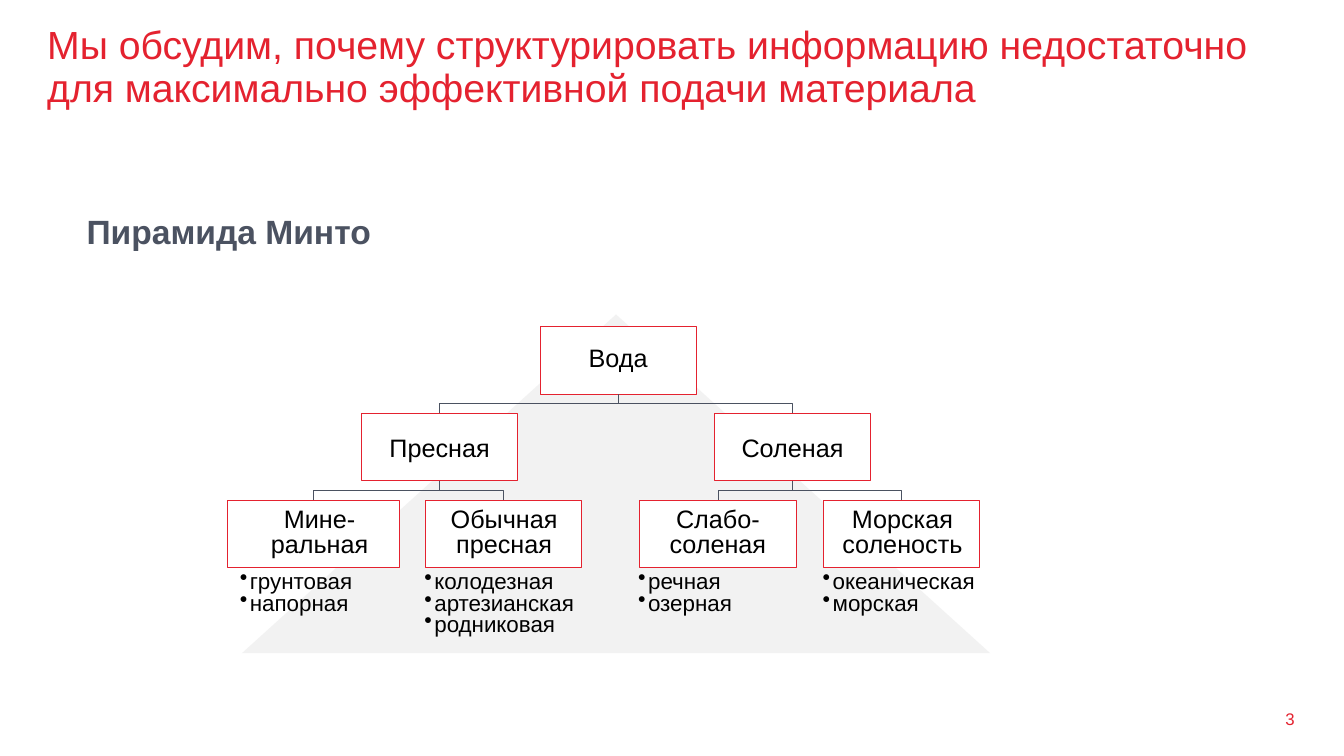
import pptx
import pptx.util
import pptx.dml.color
import pptx.enum.shapes
import pptx.enum.text
import pptx.oxml.ns
import lxml.etree

# Content
TITLE = ("Мы обсудим, почему структурировать информацию недостаточно "
         "для максимально эффективной подачи материала")
HEAD = "Пирамида Минто"
PAGE = "3"
# Tree nodes: label, level, box centre, parent
NODES = [
    ("Вода", 0, 6.13, None),
    ("Пресная", 1, 4.36, 0),
    ("Соленая", 1, 7.86, 0),
    ("Мине-ральная", 2, 3.11, 1),
    ("Обычная пресная", 2, 4.99, 1),
    ("Слабо- соленая", 2, 7.12, 2),
    ("Морская соленость", 2, 8.94, 2),
]
LISTS = [
    ["грунтовая", "напорная"],
    ["колодезная", "артезианская", "родниковая"],
    ["речная", "озерная"],
    ["океаническая", "морская"],
]
LISTW = [1.66, 2.16, 1.66, 2.31]

RED, GREY, PALE, WHITE, BLACK = "E4222F", "4B5261", "F2F2F2", "FFFFFF", "000000"
FONT = "Arial"

# Grid: rows of boxes, two pairs of leaf columns
TOP, ROW, BOXW, WIDE, BOXH = 3.24, 0.86, 1.55, 1.7, 0.67
PAIRS, STEP, LEAFW, LEAFH = (2.26, 6.21), 1.83, 1.82, 0.55
LEAVES = [left + STEP * k for left in PAIRS for k in range(2)]

inch = pptx.util.Inches
SHAPE = pptx.enum.shapes.MSO_SHAPE
ALIGN = pptx.enum.text.PP_ALIGN
ANCHOR = pptx.enum.text.MSO_ANCHOR
qn = pptx.oxml.ns.qn

deck = pptx.Presentation()
deck.slide_width, deck.slide_height = inch(13.33), inch(7.5)
slide = deck.slides.add_slide(deck.slide_layouts[6])


def tint(text):
    return pptx.dml.color.RGBColor.from_string(text)


def write(lines, at, size, color=BLACK, bold=False, align=ALIGN.LEFT,
          anchor=ANCHOR.TOP, space=1.0, dots=False):
    box = slide.shapes.add_textbox(*map(inch, at))
    frame = box.text_frame
    frame.word_wrap = True
    frame.vertical_anchor = anchor
    for i, line in enumerate(lines):
        para = frame.add_paragraph() if i else frame.paragraphs[0]
        para.text = line
        para.alignment = align
        para.line_spacing = space
        para.font.name, para.font.size = FONT, pptx.util.Pt(size)
        para.font.bold = bold
        para.font.color.rgb = tint(color)
        if dots:
            props = para._p.get_or_add_pPr()
            props.set("marL", str(inch(0.1)))
            props.set("indent", str(inch(-0.1)))
            mark = lxml.etree.Element(qn("a:buChar"), char="•")
            props.find(qn("a:defRPr")).addprevious(mark)


def draw(kind, at, fill, line=None):
    shape = slide.shapes.add_shape(kind, *map(inch, at))
    shape.shadow.inherit = False
    shape.fill.solid()
    shape.fill.fore_color.rgb = tint(fill)
    if line:
        shape.line.color.rgb = tint(line)
        shape.line.width = pptx.util.Pt(0.5)
    else:
        shape.line.fill.background()


def link(x1, y1, x2, y2):
    # An elbow turned a quarter, so that it leaves downwards
    midx, midy = (x1 + x2) / 2, (y1 + y2) / 2
    halfw, halfh = (y2 - y1) / 2, abs(x2 - x1) / 2
    side = 1 if x2 > x1 else -1
    ends = (midx + side * halfw, midy - halfh, midx - side * halfw, midy + halfh)
    wire = slide.shapes.add_connector(
        pptx.enum.shapes.MSO_CONNECTOR.ELBOW, *map(inch, ends))
    turn = 270 if side > 0 else 90
    wire._element.spPr.find(qn("a:xfrm")).set("rot", str(turn * 60000))
    wire.line.color.rgb = tint(GREY)
    wire.line.width = pptx.util.Pt(0.5)
    lxml.etree.SubElement(wire._element.spPr, qn("a:effectLst"))


# Title, page number, heading
write([TITLE], (0.37, 0.21, 12.6, 1.26), 28, RED, space=0.9)
write([PAGE], (12.28, 6.98, 0.66, 0.31), 12, RED, align=ALIGN.RIGHT,
      anchor=ANCHOR.MIDDLE)
write([HEAD], (0.76, 2.04, 6.19, 0.5), 24, GREY, bold=True)

# Pyramid and boxes
draw(SHAPE.ISOSCELES_TRIANGLE, (2.4, 3.12, 7.42, 3.36), PALE)
for i, (label, level, mid, parent) in enumerate(NODES):
    wide = WIDE if i == 3 else BOXW
    draw(SHAPE.RECTANGLE, (mid - wide / 2, TOP + ROW * level, wide, BOXH),
         WHITE, RED)

# Labels
for i, (label, level, mid, parent) in enumerate(NODES):
    high = LEAFH if level == 2 else 0.41
    y = TOP + ROW * level + (BOXH - high) / 2 - (0 if level else 0.03)
    if level == 2:
        at, space = (LEAVES[i - 3], y, LEAFW, high), 0.8
    else:
        at, space = (mid - BOXW / 2, y, BOXW, high), 1.0
    write([label], at, 18, align=ALIGN.CENTER, anchor=ANCHOR.MIDDLE, space=space)

# Lists under the leaves
for left, wide, items in zip(LEAVES, LISTW, LISTS):
    write(items, (left + 0.02, TOP + 2 * ROW + BOXH, wide, 0.85), 16,
          space=0.8, dots=True)

# Branches
for label, level, mid, parent in NODES:
    if parent is not None:
        base = TOP + ROW * level
        link(NODES[parent][2], base - ROW + BOXH, mid, base)

deck.save("out.pptx")
